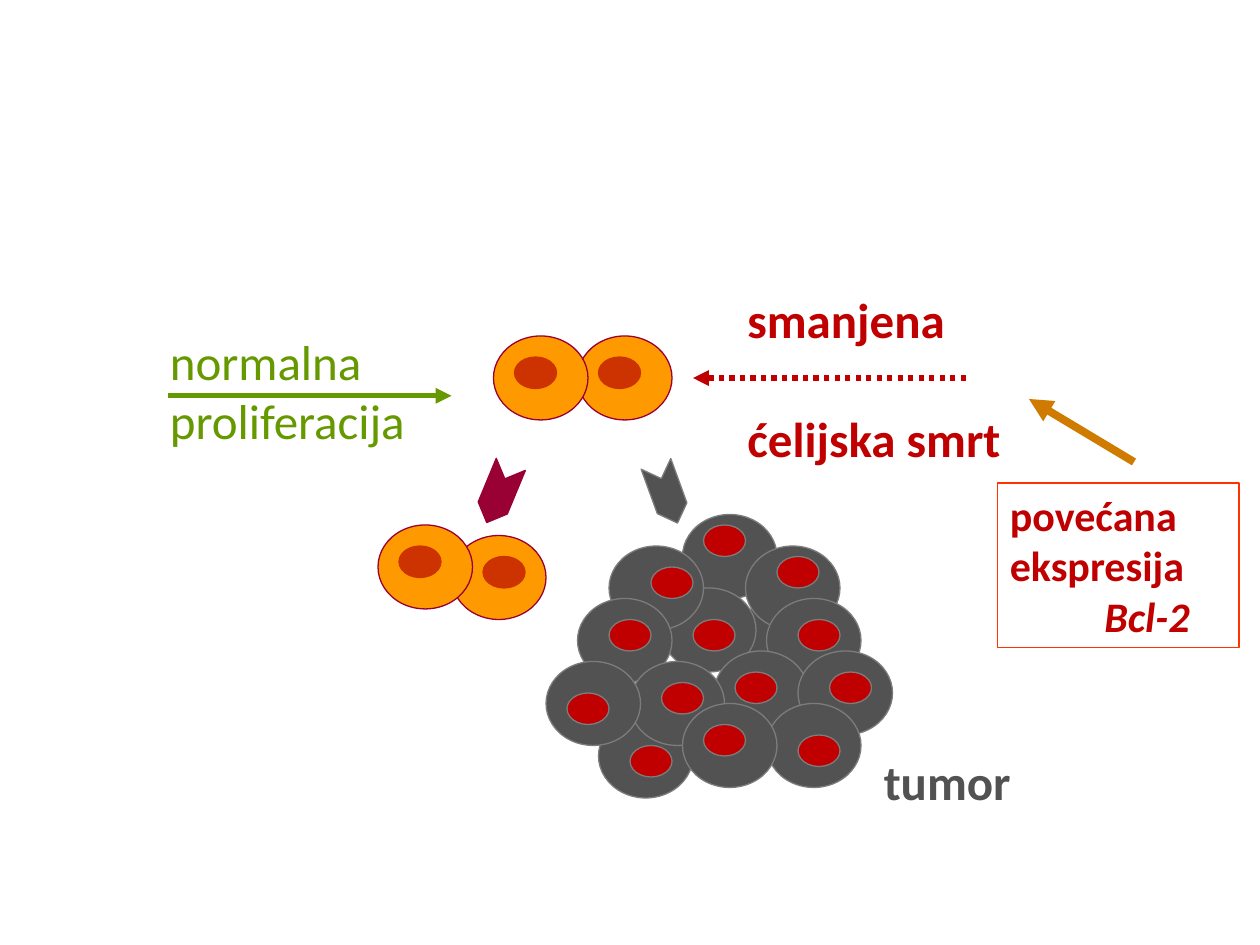
from lxml.etree import SubElement
from pptx import Presentation
from pptx.dml.color import RGBColor
from pptx.enum.dml import MSO_LINE
from pptx.enum.shapes import MSO_CONNECTOR, MSO_SHAPE
from pptx.enum.text import MSO_ANCHOR, PP_ALIGN
from pptx.oxml.ns import qn
from pptx.util import Inches, Pt

GREEN = RGBColor(0x66, 0x99, 0x00)
RED = RGBColor(0xC0, 0x00, 0x00)
AMBER = RGBColor(0xCE, 0x7B, 0x00)
SCARLET = RGBColor(0xFF, 0x33, 0x00)
ORANGE = RGBColor(0xFF, 0x99, 0x00)
RUST = RGBColor(0xCC, 0x33, 0x00)
WINE = RGBColor(0x99, 0x00, 0x33)
DARK = RGBColor(0x52, 0x52, 0x52)
GRAY = RGBColor(0x7C, 0x7C, 0x7C)

CELL = (9, 8)
NUCLEUS = (4, 3)
CHEVRON = (6, 3)


def grid(value):
    """Length of a number of grid units, twelve to the inch."""
    return Inches(value / 12)


class CellDiagram:
    font = "Calibri"
    outline = Pt(0.75)

    def __init__(self, page):
        self.page = page
        self.shapes = page.shapes

    def start_group(self):
        self.shapes = self.page.shapes.add_group_shape().shapes

    def end_group(self):
        self.shapes = self.page.shapes

    def arrow(self, start, end, color, width=3, dash=None):
        points = [grid(value) for value in (*start, *end)]
        connector = self.shapes.add_connector(MSO_CONNECTOR.STRAIGHT, *points)
        connector.line.color.rgb = color
        connector.line.width = Pt(width)
        if dash is not None:
            connector.line.dash_style = dash
        properties = connector._element.spPr
        SubElement(properties.find(qn("a:ln")), qn("a:tailEnd"), type="triangle")
        SubElement(properties, qn("a:effectLst"))

    def text(self, place, paragraphs, color, size=28, bold=False, wrap=True,
             gap=0, border=None):
        """Each paragraph is (text, italic, indent in grid units)."""
        box = self.shapes.add_textbox(*[grid(value) for value in place])
        if border is not None:
            box.line.color.rgb = border
            box.line.width = self.outline
        frame = box.text_frame
        frame.word_wrap = wrap
        frame.vertical_anchor = MSO_ANCHOR.TOP
        for index, (words, italic, indent) in enumerate(paragraphs):
            para = frame.add_paragraph() if index else frame.paragraphs[0]
            para.alignment = PP_ALIGN.LEFT
            if index and gap:
                para.space_before = Pt(gap)
            if indent:
                para._p.get_or_add_pPr().set("marL", str(grid(indent)))
            span = para.add_run()
            span.text = words
            span.font.name = self.font
            span.font.size = Pt(size)
            span.font.bold = bold
            span.font.italic = italic
            span.font.color.rgb = color

    def shape(self, kind, corner, size, fill, line, rotation=0):
        shape = self.shapes.add_shape(
            kind, *[grid(value) for value in (*corner, *size)])
        shape.shadow.inherit = False
        shape.fill.solid()
        shape.fill.fore_color.rgb = fill
        shape.line.color.rgb = line
        shape.line.width = self.outline
        shape.rotation = rotation

    def ovals(self, corners, size, fill, line):
        for corner in corners:
            self.shape(MSO_SHAPE.OVAL, corner, size, fill, line)

    def healthy_pair(self, cells, nuclei):
        self.ovals(cells, CELL, ORANGE, WINE)
        self.ovals(nuclei, NUCLEUS, RUST, RUST)

    def tumor_layer(self, cells, nuclei):
        self.ovals(cells, CELL, DARK, GRAY)
        self.ovals(nuclei, NUCLEUS, RED, GRAY)


def main():
    deck = Presentation()
    deck.slide_width, deck.slide_height = Inches(10), Inches(7.5)
    diagram = CellDiagram(deck.slides.add_slide(deck.slide_layouts[6]))

    # Normal proliferation
    diagram.start_group()
    diagram.arrow((16, 37.7), (43, 37.7), GREEN)
    diagram.text((15, 31, 34, 11),
                 [("normalna", False, 0), ("proliferacija", False, 0)], GREEN)

    # Reduced cell death
    diagram.start_group()
    diagram.arrow((92, 36), (66, 36), RED, dash=MSO_LINE.ROUND_DOT)
    diagram.text((70, 27, 32, 18.1),
                 [("smanjena", False, 0), ("ćelijska smrt", False, 0)],
                 RED, bold=True, gap=34)

    # Cause and outcome labels
    diagram.end_group()
    diagram.arrow((108, 44), (98, 38), AMBER, width=4.5)
    diagram.text((95, 46, 23, 15.7),
                 [("povećana ekspresija", False, 0), ("Bcl-2", True, 9)],
                 RED, size=24, bold=True, border=SCARLET)
    diagram.text((83, 71, 14.6, 6.8), [("tumor", False, 0)], DARK,
                 bold=True, wrap=False)

    # Dividing cells
    diagram.start_group()
    diagram.healthy_pair([(55, 32), (47, 32)], [(49, 34), (57, 34)])

    # Healthy daughter cells
    diagram.start_group()
    diagram.healthy_pair([(43, 51), (36, 50)], [(38, 52), (46, 53)])
    diagram.shape(MSO_SHAPE.CHEVRON, (44.5, 45.5), CHEVRON, WINE, WINE, 112.5)

    # Tumor, upper cells behind lower ones
    diagram.start_group()
    diagram.shape(MSO_SHAPE.CHEVRON, (60.5, 45.5), CHEVRON, DARK, GRAY, 70)
    diagram.tumor_layer(
        [(57, 68), (65, 49), (70, 57), (63, 56), (58, 52), (55, 57),
         (71, 52), (73, 57)],
        [(66, 59), (58, 59), (62, 54), (67, 50), (76, 59), (74, 53)])
    diagram.tumor_layer(
        [(68, 62), (76, 62), (60, 63), (52, 63), (73, 67), (65, 67)],
        [(79, 64), (70, 64), (76, 70), (63, 65), (67, 69), (54, 66), (60, 71)])

    deck.save("out.pptx")


if __name__ == "__main__":
    main()
